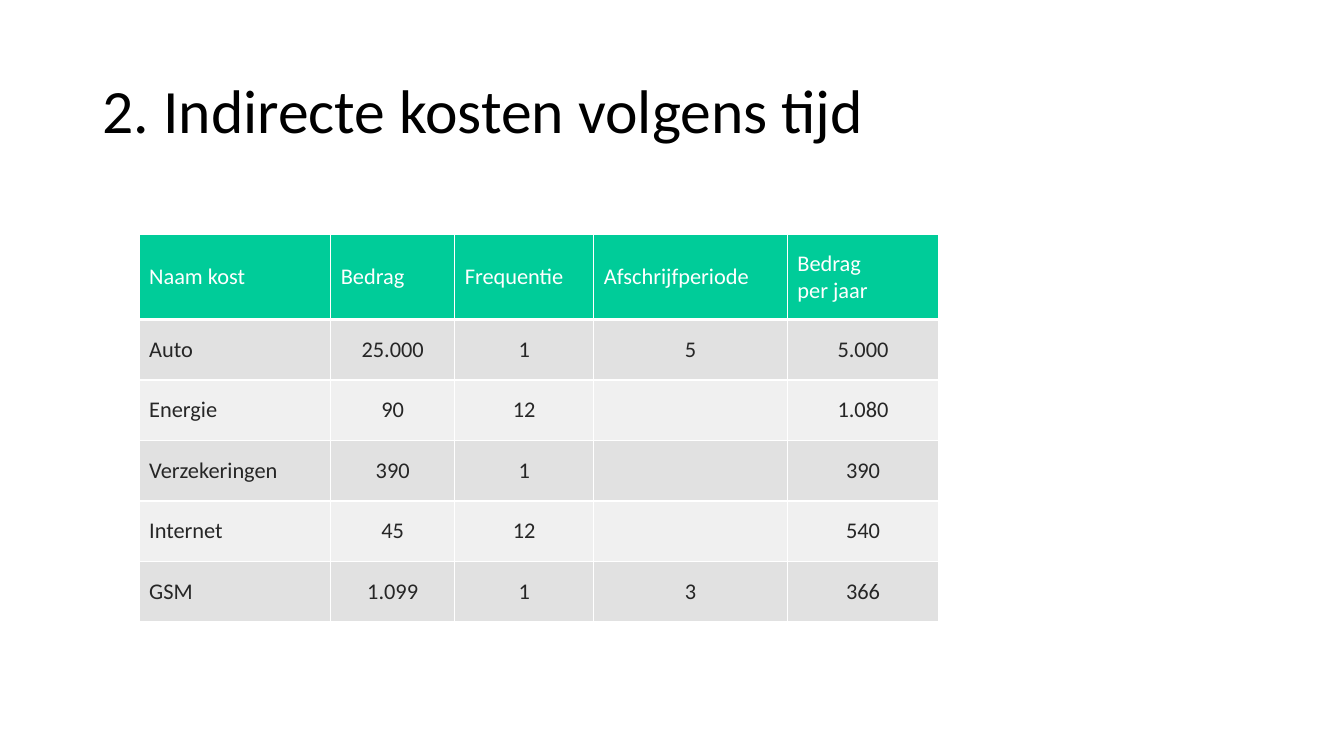
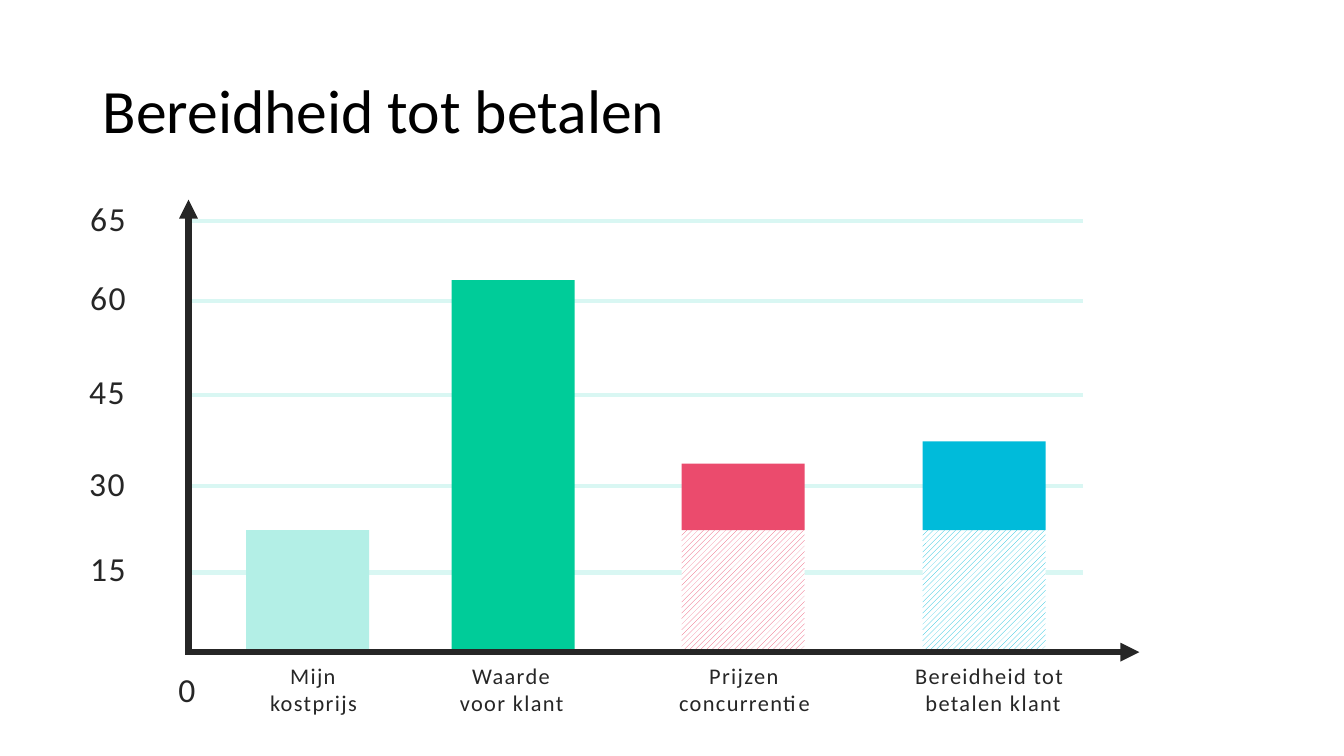
import copy

import pptx
import pptx.dml.color
import pptx.enum.dml
import pptx.enum.shapes
import pptx.enum.text
import pptx.oxml
import pptx.oxml.ns
import pptx.util

Inches = pptx.util.Inches
Pt = pptx.util.Pt
qn = pptx.oxml.ns.qn
ALIGN = pptx.enum.text.PP_ALIGN
MID = pptx.enum.text.MSO_ANCHOR.MIDDLE

WHITE, BLACK, DARK = "FFFFFF", "000000", "262626"
GREEN, MINT, PALE = "00CC99", "B3EFE6", "D9F7F3"
RED, BLUE = "EB4B6D", "00BBDA"
BANDS = ("E1E1E1", "F0F0F0")
TITLE = {"size": Pt(44), "name": "Calibri"}
TICK = {"size": Pt(24), "name": "Calibri"}
SMALL = {"size": Pt(16), "name": "Calibri"}

COLS = (1.9, 1.23, 1.38, 1.92, 1.5)
ROWS = (0.84, 0.6, 0.6, 0.6, 0.6, 0.6)
COSTS = (
    ("Naam kost", "Bedrag", "Frequentie", "Afschrijfperiode", "Bedrag \nper jaar"),
    ("Auto", "25.000", "1", "5", "5.000"),
    ("Energie", "90", "12", "", "1.080"),
    ("Verzekeringen", "390", "1", "", "390"),
    ("Internet", "45", "12", "", "540"),
    ("GSM", "1.099", "1", "3", "366"),
)

# Ticks: text, line rise above the base, label left, label drop, label width
TICKS = (
    ("15", 0.79, -1.35, 1.26, 1.1),
    ("30", 1.65, -1.42, 2.1, 1.22),
    ("45", 2.55, -1.42, 3.02, 1.22),
    ("60", 3.48, -1.41, 3.95, 1.22),
    ("65", 4.28, -1.41, 4.73, 1.22),
)
BASE, WIDE, TALL = 1.21, 1.22, 0.85
BARS = (
    ("Mijn\nkostprijs", 0.57, 0.49, 1.5, ((BASE, MINT, False),)),
    ("Waarde\nvoor klant", 2.61, 2.3, 1.81, ((3.69, GREEN, False),)),
    ("Prijzen\nconcurrentie", 4.89, 4.43, 2.17,
     ((BASE, RED, True), (0.66, RED, False))),
    ("Bereidheid tot \nbetalen klant", 7.28, 6.67, 2.62,
     ((BASE, BLUE, True), (0.88, BLUE, False))),
)


def hue(code):
    """Turn a hex string into a colour."""
    return pptx.dml.color.RGBColor.from_string(code)


def write(frame, text, style, color, align=ALIGN.LEFT, gap=0):
    """Fill a text frame with one styled paragraph."""
    para = frame.paragraphs[0]
    para.text = text
    para.alignment = align
    for run in para.runs:
        for key, value in style.items():
            setattr(run.font, key, value)
        run.font.color.rgb = hue(color)
        if gap:
            run.font._element.set("spc", str(gap))
    for cut in para._p.findall(qn("a:br")):
        cut.append(copy.deepcopy(para.runs[0].font._element))
    return para


def label(slide, box, *args, **more):
    """Add a wrapped text box, centred in height."""
    frame = slide.shapes.add_textbox(*map(Inches, box)).text_frame
    frame.word_wrap = True
    frame.vertical_anchor = MID
    return write(frame, *args, **more)


def title(slide, text):
    """Add the slide title."""
    label(slide, (0.92, 0.4, 11.5, 1.45), text, TITLE, BLACK).line_spacing = 0.9


def edge(cell, sides):
    """Draw white cell borders of the given point widths."""
    props = cell._tc.get_or_add_tcPr()
    for spot, (side, width) in enumerate(sides.items()):
        props.insert(spot, pptx.oxml.parse_xml(
            f'<a:ln{side} xmlns:a="http://schemas.openxmlformats.org/drawingml/2006/main"'
            f' w="{Pt(width)}"><a:solidFill><a:srgbClr val="{WHITE}"/></a:solidFill></a:ln{side}>'))


def grid(slide, box):
    """Add the cost table."""
    table = slide.shapes.add_table(len(ROWS), len(COLS), *map(Inches, box)).table
    for col, width in zip(table.columns, COLS):
        col.width = Inches(width)
    for r, (height, texts) in enumerate(zip(ROWS, COSTS)):
        table.rows[r].height = Inches(height)
        for c, text in enumerate(texts):
            cell = table.cell(r, c)
            cell.vertical_anchor = MID
            cell.fill.solid()
            cell.fill.fore_color.rgb = hue(BANDS[(r - 1) % 2] if r else GREEN)
            edge(cell, {"L": 1, "R": 1, "T": 1, "B": 1 if r else 3})
            write(cell.text_frame, text, SMALL, DARK if r else WHITE,
                  ALIGN.CENTER if r and c else ALIGN.LEFT)


def rule(slide, ends, color, width, arrow=False):
    """Draw a straight line, with an arrowhead if asked."""
    line = slide.shapes.add_connector(
        pptx.enum.shapes.MSO_CONNECTOR.STRAIGHT, *map(Inches, ends))
    line.line.color.rgb = hue(color)
    line.line.width = Pt(width)
    if arrow:
        pptx.oxml.ns.qn
        head = line.line._get_or_add_ln().makeelement(qn("a:tailEnd"), {"type": "triangle"})
        line.line._get_or_add_ln().append(head)
    props = line._element.spPr
    props.append(props.makeelement(qn("a:effectLst"), {}))


def block(slide, box, color, hatch):
    """Draw one solid or hatched part of a bar."""
    shape = slide.shapes.add_shape(
        pptx.enum.shapes.MSO_SHAPE.RECTANGLE, *map(Inches, box))
    shape.shadow.inherit = False
    shape.line.fill.background()
    if hatch:
        shape.fill.patterned()
        shape.fill.pattern = pptx.enum.dml.MSO_PATTERN.WIDE_UPWARD_DIAGONAL
        shape.fill.back_color.rgb = hue(WHITE)
    else:
        shape.fill.solid()
    shape.fill.fore_color.rgb = hue(color)


def plot(slide, box):
    """Draw the bars, their scale and the axes."""
    left, top, width, height = box
    base = top + height
    for text, rise, shift, drop, span in TICKS:
        rule(slide, (left, base - rise, left + 8.87, base - rise), PALE, 3)
        label(slide, (left + shift, base - drop, span, TALL),
              text, TICK, DARK, ALIGN.CENTER, 100)
    for text, start, shift, span, parts in BARS:
        level = base
        for tall, color, hatch in parts:
            level -= tall
            block(slide, (left + start, level, WIDE, tall), color, hatch)
        label(slide, (left + shift, base - 0.06, span, TALL),
              text, SMALL, DARK, ALIGN.CENTER, 100)
    rule(slide, (left, base, left, top), DARK, 4.5, True)
    rule(slide, (left - 0.03, base, left + width, base), DARK, 4.5, True)
    label(slide, (left - 0.2, base - 0.06, 0.4, TALL), "0", TICK, DARK, gap=100)


def main():
    """Build and save both slides."""
    deck = pptx.Presentation()
    deck.slide_width, deck.slide_height = Inches(13.33), Inches(7.5)
    pages = (
        ("2. Indirecte kosten volgens tijd", grid, (1.38, 2.33, 7.92, 3.83)),
        ("Bereidheid tot betalen", plot, (1.87, 1.98, 9.43, 4.49)),
    )
    for text, draw, box in pages:
        slide = deck.slides.add_slide(deck.slide_layouts[6])
        title(slide, text)
        draw(slide, box)
    deck.save("out.pptx")


if __name__ == "__main__":
    main()
